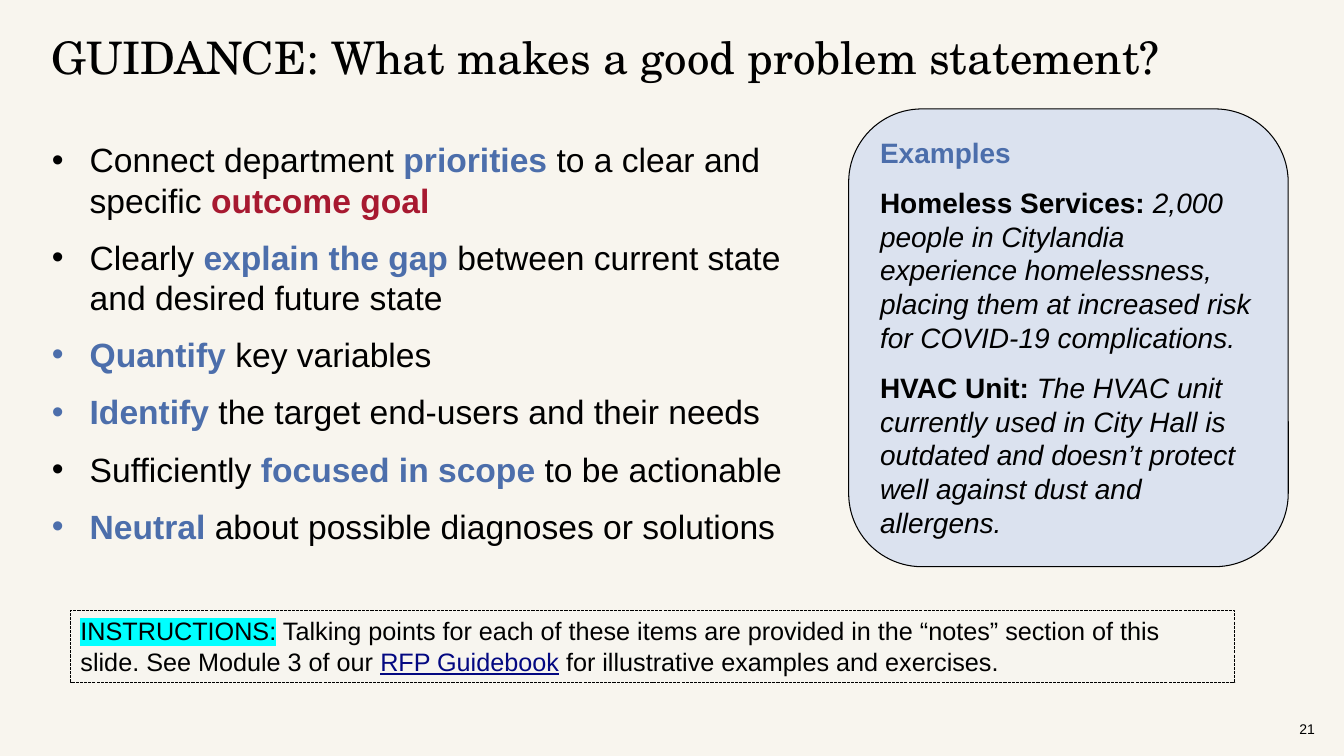
from lxml.etree import SubElement
from pptx import Presentation
from pptx.dml.color import RGBColor
from pptx.enum.dml import MSO_LINE_DASH_STYLE as Dash
from pptx.enum.shapes import MSO_SHAPE as Shape
from pptx.enum.text import MSO_ANCHOR as Anchor, MSO_AUTO_SIZE as AutoSize, PP_ALIGN as Align
from pptx.oxml.ns import qn
from pptx.util import Pt

# Content: each paragraph is a list of (text, style) runs
TITLE = "GUIDANCE: What makes a good problem statement?"
PAGE = [[("21", "plain")]]
CRITERIA = [
    [("Connect department ", "plain"), ("priorities", "key"),
     (" to a clear and specific ", "plain"), ("outcome goal", "goal")],
    [("Clearly ", "plain"), ("explain the gap ", "key"),
     ("between current state and desired future state", "plain")],
    [("Quantify", "key"), (" key variables", "plain")],
    [("Identify", "key"), (" the target end-users and their needs", "plain")],
    [("Sufficiently ", "plain"), ("focused in scope ", "key"), ("to be actionable", "plain")],
    [("Neutral", "key"), (" about possible diagnoses or solutions", "plain")],
]
EXAMPLES = [
    [("Examples", "key")],
    [("Homeless Services: ", "strong"),
     ("2,000 people in Citylandia experience homelessness, placing them at "
      "increased risk for COVID-19 complications.", "quote")],
    [("HVAC Unit: ", "strong"),
     ("The HVAC unit currently used in City Hall is outdated and doesn’t protect "
      "well against dust and allergens.", "quote")],
]
INSTRUCTIONS = [
    [("INSTRUCTIONS:", "marked"),
     (" Talking points for each of these items are provided in the “notes” section "
      "of this slide. See Module 3 of our ", "plain"),
     ("RFP Guidebook", "link"),
     (" for illustrative examples and exercises.", "plain")],
]

# Style: colour, then the font switches that are on
STYLES = {
    "plain": ("000000", ()),
    "key": ("4C6EAB", ("bold",)),
    "goal": ("A71930", ("bold",)),
    "strong": ("000000", ("bold",)),
    "quote": ("000000", ("italic",)),
    "link": ("030881", ("underline",)),
    "marked": ("000000", ()),
}
HIGHLIGHT = "00FFFF"
INDENT = Pt(27)


def color(value):
    return RGBColor.from_string(value)


def write(shape, paragraphs, size, after=0, bullet=False, anchor=Anchor.TOP):
    frame = shape.text_frame
    frame.word_wrap = True
    frame.vertical_anchor = anchor
    for i, runs in enumerate(paragraphs):
        para = frame.add_paragraph() if i else frame.paragraphs[0]
        para.alignment = Align.LEFT
        para.space_after = Pt(after)
        if bullet:
            props = para._p.get_or_add_pPr()
            props.set("marL", str(INDENT))
            props.set("indent", str(-INDENT))
            SubElement(props, qn("a:buFont"), typeface="Arial")
            SubElement(props, qn("a:buChar"), char="•")
        para.font.name, para.font.size = "Arial", Pt(size)
        for text, style in runs:
            run = para.add_run()
            run.text = text
            tint, switches = STYLES[style]
            run.font.color.rgb = color(tint)
            for switch in switches:
                setattr(run.font, switch, True)
            if style == "marked":
                mark = SubElement(run._r.get_or_add_rPr(), qn("a:highlight"))
                SubElement(mark, qn("a:srgbClr"), val=HIGHLIGHT)


def panel(kind, box, fill):
    shape = slide.shapes.add_shape(kind, *map(Pt, box))
    shape.shadow.inherit = False
    shape.fill.solid()
    shape.fill.fore_color.rgb = color(fill)
    shape.line.color.rgb = color("000000")
    shape.line.width = Pt(0.75)
    return shape


prs = Presentation()
prs.slide_width, prs.slide_height = Pt(960), Pt(540)
slide = prs.slides.add_slide(prs.slide_layouts[5])
slide.background.fill.solid()
slide.background.fill.fore_color.rgb = color("F8F5EE")

# Title
title = slide.shapes.title
title.left, title.top, title.width, title.height = map(Pt, (29.5, 21, 864, 42.5))
heading = title.text_frame
heading.text = TITLE
heading.auto_size = AutoSize.NONE
heading.vertical_anchor = Anchor.TOP
heading.margin_top, heading.margin_bottom = 0, Pt(3.6)
heading_line = heading.paragraphs[0]
heading_line.alignment = Align.LEFT
heading_line.font.name, heading_line.font.size = "TeX Gyre Schola", Pt(32)
heading_line.font.color.rgb = color("000000")

# Criteria list
criteria = slide.shapes.add_textbox(*map(Pt, (30, 96, 576, 366)))
write(criteria, CRITERIA, 24, after=12, bullet=True)

# Instructions strip
instructions = panel(Shape.RECTANGLE, (50.4, 436.3, 831.6, 51), "F7F5EF")
instructions.line.dash_style = Dash.SQUARE_DOT
write(instructions, INSTRUCTIONS, 18)

# Examples card
examples = panel(Shape.ROUNDED_RECTANGLE, (606.2, 77.8, 314, 327), "DBE2EF")
write(examples, EXAMPLES, 20, after=12)

# Page number
page = slide.shapes.add_textbox(*map(Pt, (921, 506, 36, 29)))
write(page, PAGE, 10, anchor=Anchor.MIDDLE)

prs.save("out.pptx")
